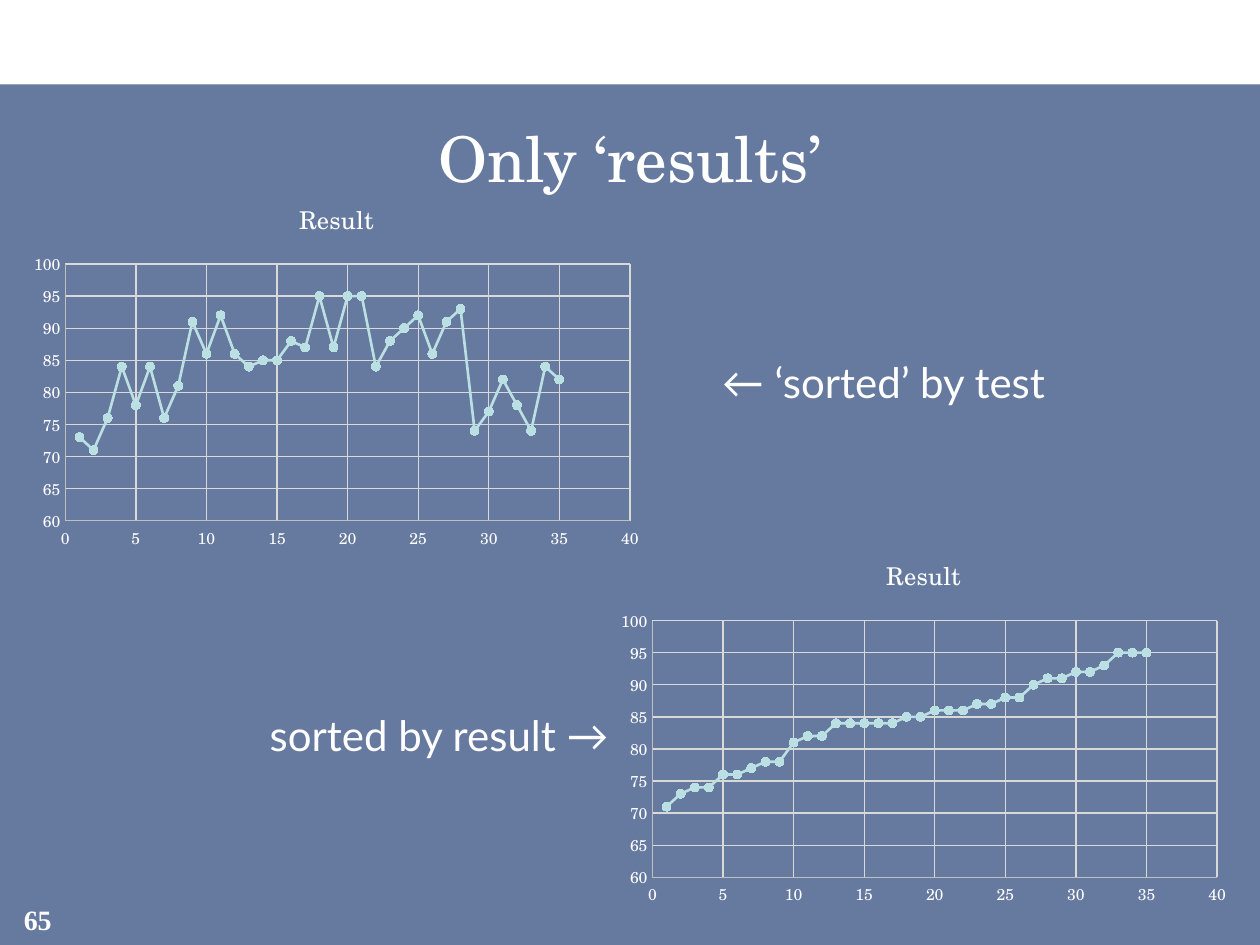
from lxml import etree
from pptx import Presentation
from pptx import util as u
from pptx.chart.data import XyChartData
from pptx.dml.color import RGBColor
from pptx.enum import chart as charts, shapes, text
from pptx.oxml.ns import qn

SERIF = "TeX Gyre Schola"
SANS = "Lato"
WHITE = "FFFFFF"
AQUA = "BBE0E3"
RESULTS = [73, 71, 76, 84, 78, 84, 76, 81, 91, 86, 92, 86, 84, 85, 85, 88, 87, 95,
           87, 95, 95, 84, 88, 90, 92, 86, 91, 93, 74, 77, 82, 78, 74, 84, 82]


def color(value):
    return RGBColor.from_string(value)


def set_font(font, size, name, bold=False):
    font.size = u.Pt(size)
    font.name = name
    font.bold = bold
    font.color.rgb = color(WHITE)


def set_line(line, value, width):
    line.color.rgb = color(value)
    line.width = u.Pt(width)


def add_backdrop(page, box):
    panel = page.shapes.add_shape(shapes.MSO_SHAPE.RECTANGLE, *map(u.Inches, box))
    panel.shadow.inherit = False
    panel.fill.solid()
    panel.fill.fore_color.rgb = color("002060")
    panel.line.fill.background()
    tint = panel.fill._xPr.find(qn("a:solidFill"))[0]
    etree.SubElement(tint, qn("a:alpha"), val="60000")


def add_label(page, box, words, size, name, align, bold=False):
    frame = page.shapes.add_textbox(*map(u.Inches, box)).text_frame
    frame.word_wrap = True
    frame.vertical_anchor = text.MSO_ANCHOR.MIDDLE
    frame.margin_left = frame.margin_right = 0
    frame.margin_top = frame.margin_bottom = 0
    para = frame.paragraphs[0]
    para.text = words
    para.alignment = align
    set_font(para.font, size, name, bold)


def style_axis(axis, low, high, step):
    axis.minimum_scale, axis.maximum_scale, axis.major_unit = low, high, step
    axis.major_tick_mark = axis.minor_tick_mark = charts.XL_TICK_MARK.NONE
    axis.has_major_gridlines = True
    set_line(axis.major_gridlines.format.line, "D9D9D9", 0.75)
    set_line(axis.format.line, "BFBFBF", 0.75)
    set_font(axis.tick_labels.font, 9, SERIF)


def add_result_chart(page, box, values):
    data = XyChartData()
    points = data.add_series("Result")
    for number, value in enumerate(values, 1):
        points.add_data_point(number, value)
    chart = page.shapes.add_chart(
        charts.XL_CHART_TYPE.XY_SCATTER_LINES, *map(u.Inches, box), data).chart
    set_font(chart.font, 10, SERIF)
    chart.has_legend = False
    chart.has_title = True
    heading = chart.chart_title.text_frame.paragraphs[0]
    heading.text = "Result"
    set_font(heading.font, 14, SERIF)
    chart.chart_title.include_in_layout = False
    style_axis(chart.category_axis, 0, 40, 5)
    style_axis(chart.value_axis, 60, 100, 5)

    plot = chart.plots[0]
    plot.vary_by_categories = False
    series = plot.series[0]
    series.smooth = False
    set_line(series.format.line, AQUA, 1.5)
    series.marker.style = charts.XL_MARKER_STYLE.CIRCLE
    series.marker.size = 5
    series.marker.format.fill.solid()
    series.marker.format.fill.fore_color.rgb = color(AQUA)
    set_line(series.marker.format.line, AQUA, 0.75)


def main():
    deck = Presentation()
    deck.slide_width, deck.slide_height = u.Inches(10), u.Inches(7.5)
    page = deck.slides.add_slide(deck.slide_layouts[6])
    align = text.PP_ALIGN
    add_backdrop(page, (0, 0.67, 10, 6.83))
    add_label(page, (0, 7.1, 0.6, 0.4), "65", 16, "Times New Roman", align.CENTER, True)
    add_label(page, (0.25, 0.83, 9.5, 0.83), "Only ‘results’", 36, SERIF, align.CENTER)
    add_label(page, (5.73, 2.78, 4, 0.5), "← ‘sorted’ by test", 24, SANS, align.LEFT)
    add_label(page, (0.83, 5.58, 4, 0.5), "sorted by result →", 24, SANS, align.RIGHT)
    add_result_chart(page, (0.17, 1.42, 5, 3), RESULTS)
    add_result_chart(page, (4.83, 4.25, 5, 3), sorted(RESULTS))
    deck.save("out.pptx")


if __name__ == "__main__":
    main()
